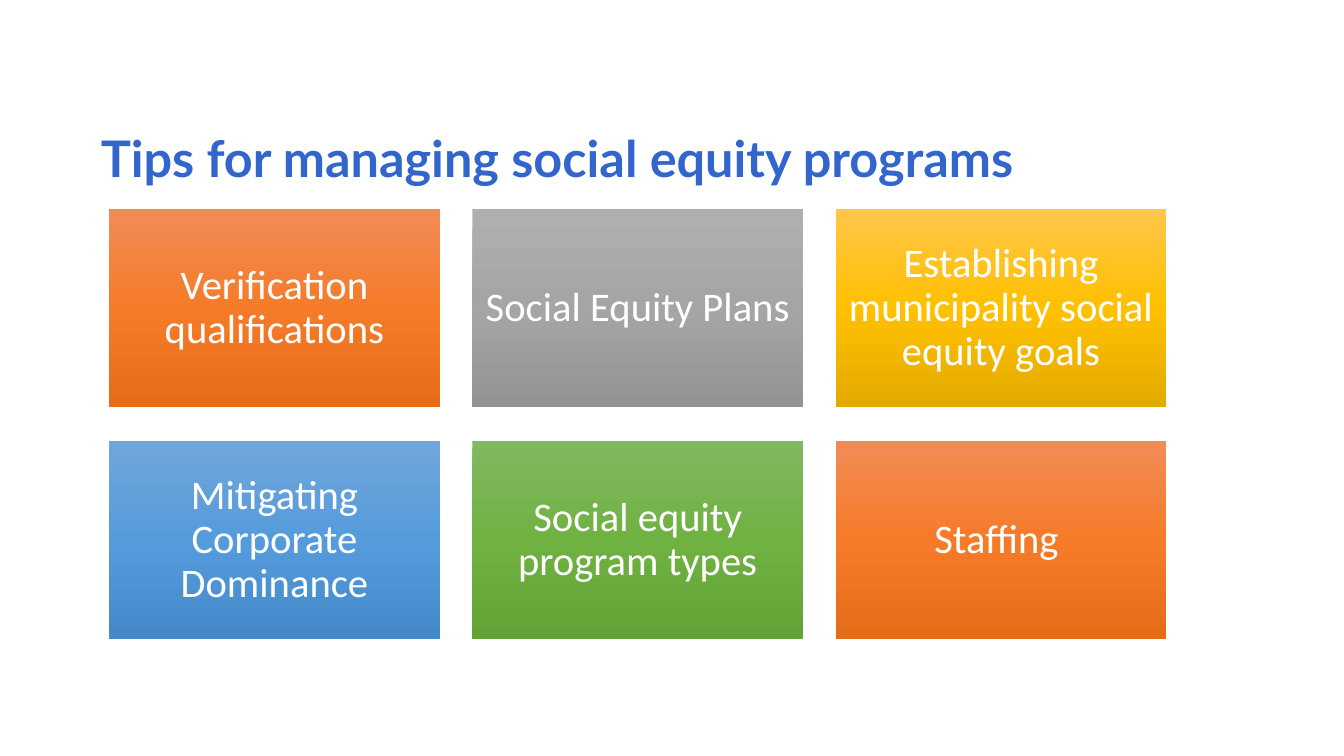
import copy

import pptx
import pptx.dml.color
import pptx.enum.shapes
import pptx.enum.text
import pptx.oxml.ns
import pptx.util

SCALE = 9525  # EMU per px, 96 px to the inch
ORANGE = ("F18C57", "F67B28", "E56C19")
GREY = ("AFAFAF", "A5A5A5", "939393")
GOLD = ("FFC64B", "FFC000", "E3AB00")
BLUE = ("71A6DB", "559BDB", "448ACA")
GREEN = ("81B861", "6FB242", "62A336")

TIPS = [
    ("Verification qualifications", ORANGE),
    ("Social Equity Plans", GREY),
    ("Establishing municipality social equity goals", GOLD),
    ("Mitigating Corporate Dominance", BLUE),
    ("Social equity program types", GREEN),
    ("Staffing ", ORANGE),
]


def px(n):
    return pptx.util.Emu(n * SCALE)


def rgb(code):
    return pptx.dml.color.RGBColor.from_string(code)


class Deck:
    head_font = "Lato"
    body_font = "Calibri"
    head_color = "3366CC"
    body_color = "FFFFFF"

    def __init__(self, width, height):
        self.prs = pptx.Presentation()
        self.prs.slide_width = px(width)
        self.prs.slide_height = px(height)
        self.slide = self.prs.slides.add_slide(self.prs.slide_layouts[5])

    def label(self, shape, text, font, size, color, bold, align, anchor, inset, space):
        frame = shape.text_frame
        frame.text = text
        frame.word_wrap = True
        frame.auto_size = pptx.enum.text.MSO_AUTO_SIZE.NONE
        frame.vertical_anchor = anchor
        frame.margin_left = frame.margin_right = px(inset)
        frame.margin_top = frame.margin_bottom = px(inset)
        para = frame.paragraphs[0]
        para.alignment = align
        para.line_spacing = space
        style = para.runs[0].font
        style.name = font
        style.size = pptx.util.Pt(size)
        style.bold = bold
        style.color.rgb = rgb(color)

    def title(self, text, left, top, width, height):
        shape = self.slide.shapes.title
        shape.left, shape.top = px(left), px(top)
        shape.width, shape.height = px(width), px(height)
        self.label(shape, text, self.head_font, 36, self.head_color, True,
                   pptx.enum.text.PP_ALIGN.LEFT,
                   pptx.enum.text.MSO_ANCHOR.BOTTOM, 0, 1.1)

    def shade(self, shape, colors):
        """Fill with evenly spaced colours from top to bottom."""
        fill = shape.fill
        fill.gradient()
        fill.gradient_angle = 270
        stops = shape.element.spPr.find(".//" + pptx.oxml.ns.qn("a:gsLst"))
        stops.insert(1, copy.deepcopy(stops[0]))
        for i, (stop, color) in enumerate(zip(fill.gradient_stops, colors)):
            stop.position = i / (len(colors) - 1)
            stop.color.rgb = rgb(color)

    def card(self, text, colors, left, top, width, height):
        shape = self.slide.shapes.add_shape(
            pptx.enum.shapes.MSO_SHAPE.RECTANGLE,
            px(left), px(top), px(width), px(height))
        shape.shadow.inherit = False
        shape.line.fill.background()
        self.shade(shape, colors)
        self.label(shape, text, self.body_font, 29, self.body_color, False,
                   pptx.enum.text.PP_ALIGN.CENTER,
                   pptx.enum.text.MSO_ANCHOR.MIDDLE, 11, 0.9)

    def grid(self, cards, left, top, width, height, cols, gap_x, gap_y):
        for i, (text, colors) in enumerate(cards):
            row, col = divmod(i, cols)
            self.card(text, colors, left + col * (width + gap_x),
                      top + row * (height + gap_y), width, height)


def main():
    deck = Deck(1280, 720)
    deck.title("Tips for managing social equity programs", 96, 49, 1070, 130)
    deck.grid(TIPS, 104, 199, 315, 189, cols=3, gap_x=31, gap_y=32)
    deck.prs.save("out.pptx")


if __name__ == "__main__":
    main()
